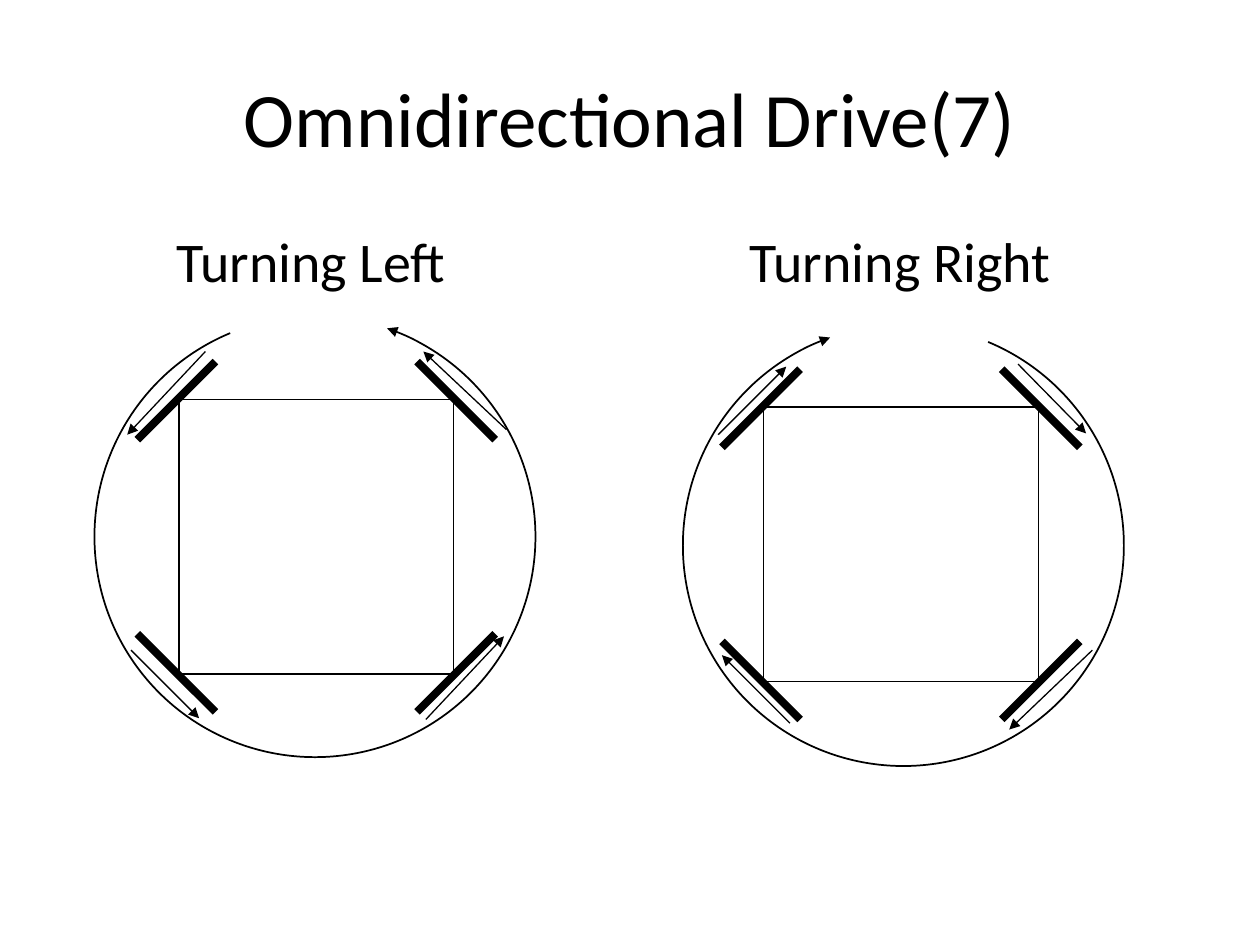
from itertools import product

from lxml.etree import SubElement
from pptx import Presentation
from pptx.dml.color import RGBColor
from pptx.enum.shapes import MSO_CONNECTOR, MSO_SHAPE
from pptx.enum.text import MSO_ANCHOR, PP_ALIGN
from pptx.oxml.ns import qn
from pptx.util import Inches, Pt

BLACK = RGBColor(0x00, 0x00, 0x00)
WHITE = RGBColor(0xFF, 0xFF, 0xFF)
FONT = "Calibri"

FRAME_SIDE = 2.18
WHEEL_DX, WHEEL_DY = 1.11, 1.08
WHEEL_HALF = 0.31
TURN_RADIUS = 1.75
ARC_UNITS_PER_DEGREE = 0.6

# Arc angles are in degrees, clockwise from three o'clock.
DRIVES = [
    {
        "caption": "Turning Left",
        "caption_left": 1.3,
        "frame_center": (2.51, 4.26),
        "turn_center": (2.5, 4.26),
        "turn_angles": (289.1, 247.4),
        "turn_arrow_end": "headEnd",
        "wheel_motions": [
            (4.02, 3.41, 3.36, 2.79),
            (1.04, 5.16, 1.58, 5.70),
            (1.63, 2.79, 1.01, 3.45),
            (3.38, 5.71, 4.00, 5.05),
        ],
    },
    {
        "caption": "Turning Right",
        "caption_left": 5.85,
        "frame_center": (7.15, 4.32),
        "turn_center": (7.17, 4.33),
        "turn_angles": (292.6, 250.6),
        "turn_arrow_end": "tailEnd",
        "wheel_motions": [
            (5.70, 3.45, 6.24, 2.91),
            (8.67, 5.16, 8.01, 5.79),
            (6.27, 5.74, 5.73, 5.20),
            (8.08, 2.89, 8.62, 3.44),
        ],
    },
]


def add_arrowhead(line, end):
    SubElement(line._get_or_add_ln(), qn(f"a:{end}"), type="triangle")


def add_line(x1, y1, x2, y2, width):
    """Draw a black line without shadow, in inches, and return it."""
    connector = slide.shapes.add_connector(
        MSO_CONNECTOR.STRAIGHT, Inches(x1), Inches(y1), Inches(x2), Inches(y2))
    connector.line.color.rgb = BLACK
    connector.line.width = Pt(width)
    SubElement(connector._element.spPr, qn("a:effectLst"))
    return connector


prs = Presentation()
prs.slide_width, prs.slide_height = Inches(10), Inches(7.5)
slide = prs.slides.add_slide(prs.slide_layouts[3])

title = slide.shapes.title
title.left, title.top = Inches(0.5), Inches(0.3)
title.width, title.height = Inches(9), Inches(1.25)
title.text_frame.text = "Omnidirectional Drive(7)"
title.text_frame.vertical_anchor = MSO_ANCHOR.MIDDLE
heading = title.text_frame.paragraphs[0]
heading.alignment = PP_ALIGN.CENTER
heading.font.name = FONT
heading.font.size = Pt(44)
heading.font.color.rgb = BLACK

for placeholder_index, drive in enumerate(DRIVES, start=1):
    caption = slide.placeholders[placeholder_index]
    caption.left, caption.top = Inches(drive["caption_left"]), Inches(1.75)
    caption.width, caption.height = Inches(3), Inches(0.75)
    caption.text_frame.text = drive["caption"]
    caption_line = caption.text_frame.paragraphs[0]
    caption_line.font.name = FONT
    caption_line.font.size = Pt(32)
    caption_line.font.color.rgb = BLACK
    caption_format = caption_line._p.get_or_add_pPr()
    caption_format.set("marL", "0")
    caption_format.set("indent", "0")
    SubElement(caption_format, qn("a:buNone"))

    center_x, center_y = drive["frame_center"]
    frame = slide.shapes.add_shape(
        MSO_SHAPE.RECTANGLE,
        Inches(center_x - FRAME_SIDE / 2), Inches(center_y - FRAME_SIDE / 2),
        Inches(FRAME_SIDE), Inches(FRAME_SIDE))
    frame.shadow.inherit = False
    frame.fill.solid()
    frame.fill.fore_color.rgb = WHITE
    frame.line.color.rgb = BLACK
    frame.line.width = Pt(0.75)

    # Each wheel lies across a corner, tangent to the turning circle.
    for side_x, side_y in product((-1, 1), repeat=2):
        wheel_x = center_x + side_x * WHEEL_DX
        wheel_y = center_y + side_y * WHEEL_DY
        rise = -side_x * side_y * WHEEL_HALF
        add_line(wheel_x - WHEEL_HALF, wheel_y - rise,
                 wheel_x + WHEEL_HALF, wheel_y + rise, 4.5)

    for motion in drive["wheel_motions"]:
        add_arrowhead(add_line(*motion, 0.75).line, "tailEnd")

    turn_x, turn_y = drive["turn_center"]
    turn = slide.shapes.add_shape(
        MSO_SHAPE.ARC,
        Inches(turn_x - TURN_RADIUS), Inches(turn_y - TURN_RADIUS),
        Inches(2 * TURN_RADIUS), Inches(2 * TURN_RADIUS))
    for index, angle in enumerate(drive["turn_angles"]):
        turn.adjustments[index] = angle * ARC_UNITS_PER_DEGREE
    turn.shadow.inherit = False
    turn.fill.background()
    turn.line.color.rgb = BLACK
    turn.line.width = Pt(1)
    add_arrowhead(turn.line, drive["turn_arrow_end"])

prs.save("out.pptx")
